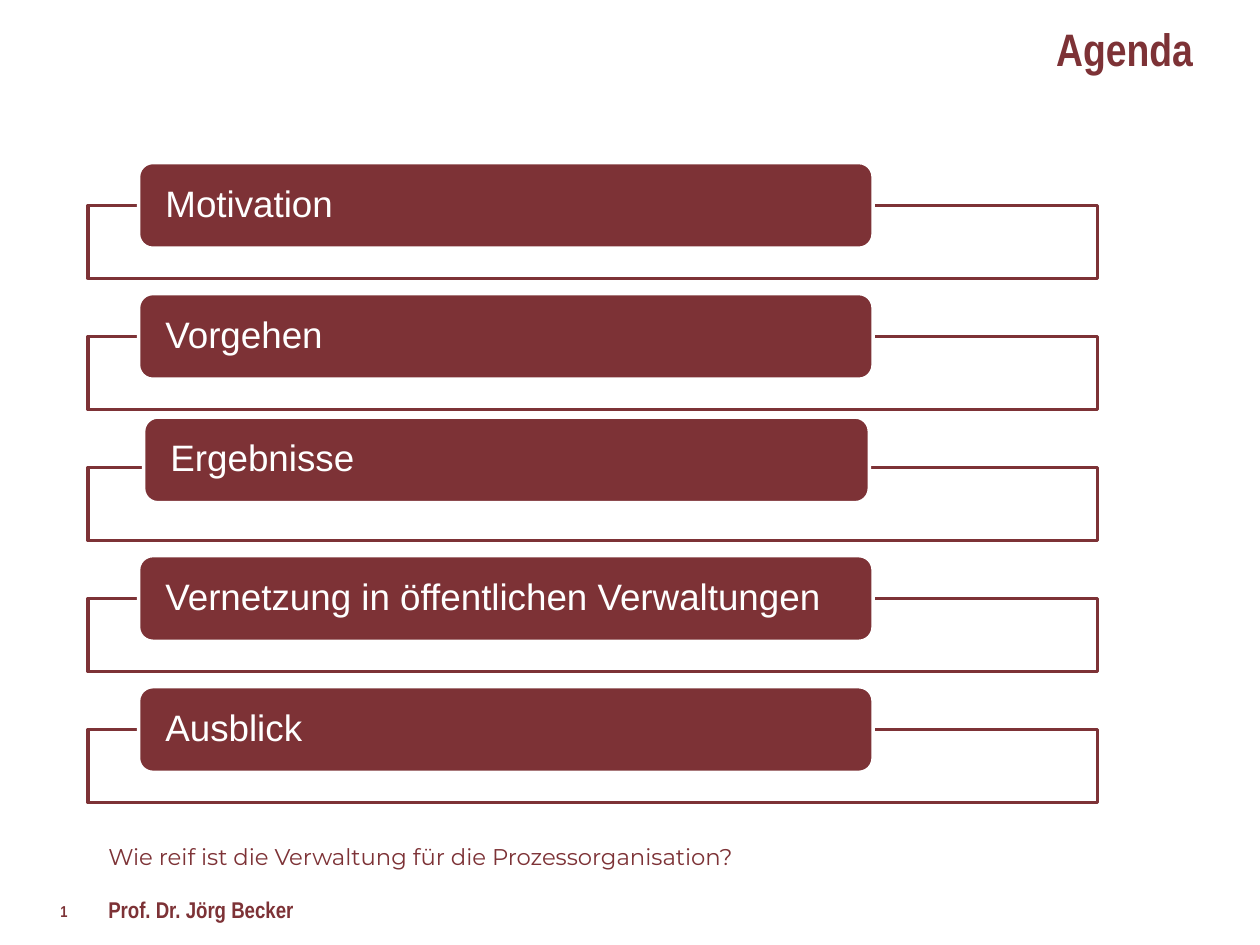
from lxml import etree
from pptx import Presentation, util as u
from pptx.dml.color import RGBColor
from pptx.enum import shapes, text
from pptx.oxml import ns

WINE, WHITE = "7D3236", "FFFFFF"

deck = Presentation()
deck.slide_width, deck.slide_height = u.Inches(10), u.Inches(7.5)
column, row = deck.slide_width / 100, deck.slide_height / 75
page = deck.slides.add_slide(deck.slide_layouts[6])


def paint(target, color):
    if hasattr(target, "solid"):
        target.solid()
        target = target.fore_color
    target.rgb = RGBColor.from_string(color)


def write(box, words, color, font, frame, paragraph):
    for name, value in frame.items():
        setattr(box.text_frame, name, value)
    para = box.text_frame.paragraphs[0]
    for name, value in paragraph.items():
        setattr(para, name, value)
    span = para.add_run()
    span.text = words
    for name, value in font.items():
        setattr(span.font, name, value)
    paint(span.font.color, color)


margins = {
    "margin_left": round(1.3 * column), "margin_right": round(1.3 * column),
    "margin_top": round(0.7 * row), "margin_bottom": round(0.7 * row),
    "word_wrap": True, "auto_size": text.MSO_AUTO_SIZE.SHAPE_TO_FIT_TEXT,
}
narrow = {"name": "Arial Narrow", "bold": True}
labels = [
    ("1", (3.1, 70.9, 5.1, 2.8), {**narrow, "size": u.Pt(9)},
     {**margins, "margin_left": round(1.7 * column), "word_wrap": False,
      "vertical_anchor": text.MSO_ANCHOR.MIDDLE}, {}),
    ("Wie reif ist die Verwaltung für die Prozessorganisation?",
     (7.3, 66.2, 74.2, 3.5), {"name": "Montserrat", "size": u.Pt(13)}, margins, {}),
    ("Prof. Dr. Jörg Becker", (7.3, 70.4, 45.4, 3.5),
     {**narrow, "size": u.Pt(13)}, margins, {}),
    ("Agenda", (83, 1.7, 12, 4.4), {**narrow, "size": u.Pt(26)},
     {**margins, "margin_left": round(0.8 * column), "margin_right": round(0.3 * column),
      "margin_top": 0, "margin_bottom": 0, "word_wrap": False},
     {"alignment": text.PP_ALIGN.RIGHT}),
]
for words, (left, top, width, height), font, frame, paragraph in labels:
    box = page.shapes.add_textbox(
        round(left * column), round(top * row), round(width * column), round(height * row))
    write(box, words, WINE, font, frame, paragraph)
paint(box.fill, WHITE)

topic_font = {"name": "Arial", "size": u.Pt(21)}
topic_frame = {
    "margin_left": round(1.8 * column), "margin_right": round(1.8 * column),
    "margin_top": 0, "margin_bottom": 0, "word_wrap": True,
    "vertical_anchor": text.MSO_ANCHOR.MIDDLE,
}
topic_paragraph = {"alignment": text.PP_ALIGN.LEFT, "line_spacing": 0.9}
topics = ["Motivation", "Vorgehen", "Ergebnisse",
          "Vernetzung in öffentlichen Verwaltungen", "Ausblick"]
for index, topic in enumerate(topics):
    band = 10.4 * index
    left, top, width = (11.4, 12.3, 57.6) if topic == "Ergebnisse" else (11, 12.9, 58.3)
    parts = [
        (shapes.MSO_SHAPE.RECTANGLE, (7, 16.3, 80.1, 5.8), WHITE, WINE),
        (shapes.MSO_SHAPE.ROUNDED_RECTANGLE, (left, top, width, 6.8), WINE, WHITE),
    ]
    for kind, (x, y, w, h), fill, line in parts:
        box = page.shapes.add_shape(
            kind, round(x * column), round((y + band) * row), round(w * column), round(h * row))
        box.shadow.inherit = False
        paint(box.fill, fill)
        paint(box.line.fill, line)
        box.line.width = u.Pt(2)
        if fill == WHITE:
            shade = box.fill._xPr.find(".//" + ns.qn("a:srgbClr"))
            etree.SubElement(shade, ns.qn("a:alpha"), val="90000")
    write(box, topic, WHITE, topic_font, topic_frame, topic_paragraph)

deck.save("out.pptx")
